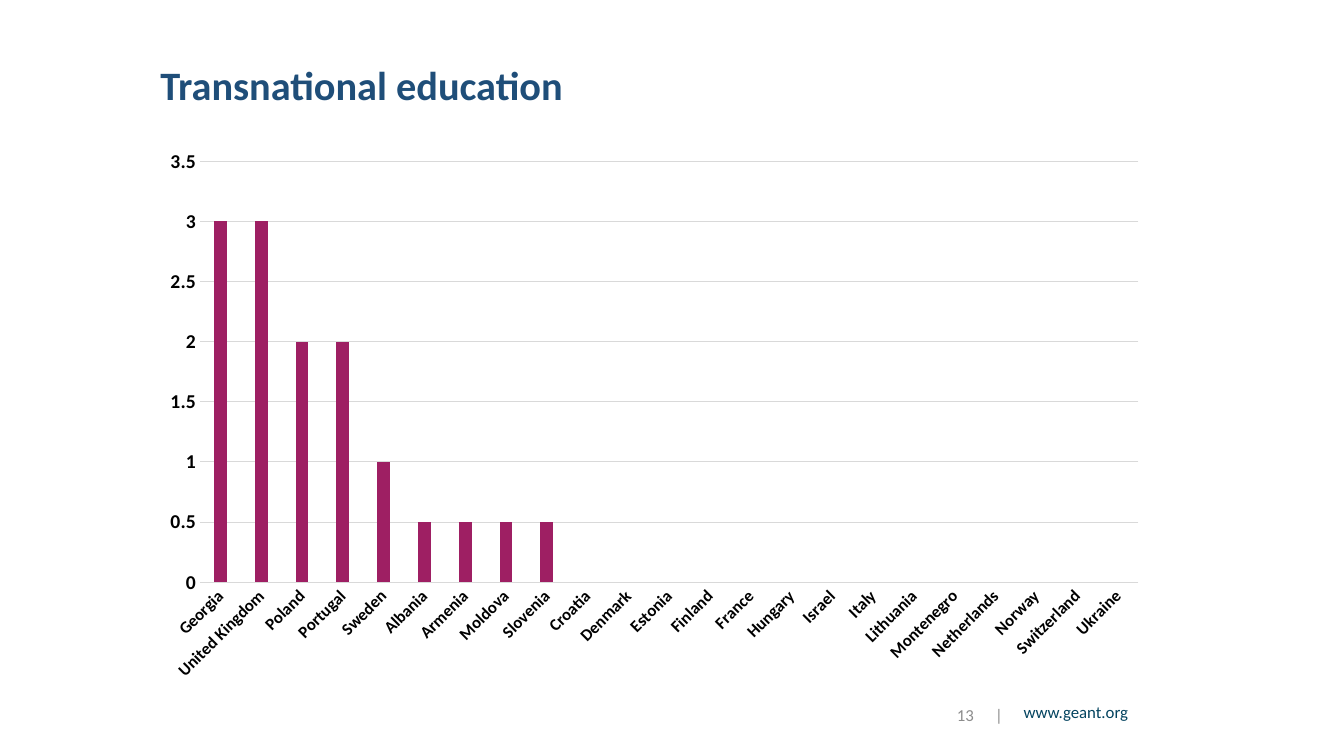
from lxml.etree import SubElement
from pptx import Presentation
from pptx.chart.data import CategoryChartData
from pptx.dml.color import RGBColor
from pptx.enum.chart import XL_CHART_TYPE, XL_TICK_MARK
from pptx.enum.text import MSO_ANCHOR, MSO_AUTO_SIZE, PP_ALIGN
from pptx.oxml.ns import qn
from pptx.util import Inches, Pt

WIDTH, HEIGHT = Inches(13.33), Inches(7.5)
FONT = "Calibri"
COLORS = {
    "title": "1F4E79",
    "link": "03435F",
    "page": "8C8C8C",
    "bar": "9E1F63",
    "grid": "D9D9D9",
    "text": "000000",
}

# Countries by number of points, highest first
SCORES = {
    3: ["Georgia", "United Kingdom"],
    2: ["Poland", "Portugal"],
    1: ["Sweden"],
    0.5: ["Albania", "Armenia", "Moldova", "Slovenia"],
    None: ["Croatia", "Denmark", "Estonia", "Finland", "France", "Hungary",
           "Israel", "Italy", "Lithuania", "Montenegro", "Netherlands",
           "Norway", "Switzerland", "Ukraine"],
}


def area(col, row, cols, rows):
    """Turn cells of a 100 by 100 grid into left, top, width, height."""
    return (int(WIDTH * col / 100), int(HEIGHT * row / 100),
            int(WIDTH * cols / 100), int(HEIGHT * rows / 100))


def color(name):
    return RGBColor.from_string(COLORS[name])


def style(font, size, name, bold=False):
    font.name = FONT
    font.size = Pt(size)
    font.bold = bold
    font.color.rgb = color(name)


def rule(line):
    line.color.rgb = color("grid")
    line.width = Pt(0.75)


def write(frame, text, size, name, bold=False):
    par = frame.paragraphs[0]
    run = par.add_run()
    run.text = text
    style(run.font, size, name, bold)
    return par


def add_title(slide, text, place):
    title = slide.shapes.title
    title.left, title.top, title.width, title.height = place
    frame = title.text_frame
    frame.auto_size = MSO_AUTO_SIZE.NONE
    frame.vertical_anchor = MSO_ANCHOR.MIDDLE
    par = write(frame, text, 28.8, "title", True)
    par.alignment = PP_ALIGN.LEFT
    par.line_spacing = 0.9


def add_note(slide, text, place, name, anchor, align):
    frame = slide.shapes.add_textbox(*place).text_frame
    frame.word_wrap = True
    frame.vertical_anchor = anchor
    par = write(frame, text, 12, name)
    par.alignment = align
    return frame


def add_page(slide, text, place):
    frame = add_note(slide, text, place, "page", MSO_ANCHOR.MIDDLE, PP_ALIGN.LEFT)
    frame.margin_left, frame.margin_right = Inches(0.2), 0
    # The tab stop sets the gap between number and bar
    props = frame.paragraphs[0]._p.get_or_add_pPr()
    tabs = SubElement(props, qn("a:tabLst"))
    SubElement(tabs, qn("a:tab"), pos=str(Inches(0.38)), algn="l")


def add_bars(slide, place):
    data = CategoryChartData()
    pairs = [(land, score) for score, lands in SCORES.items() for land in lands]
    data.categories = [land for land, _ in pairs]
    data.add_series("Series 1", [score for _, score in pairs])
    chart = slide.shapes.add_chart(
        XL_CHART_TYPE.COLUMN_CLUSTERED, *place, data).chart
    chart.has_legend = chart.has_title = False
    style(chart.font, 10, "text")

    # Bars
    plot = chart.plots[0]
    plot.gap_width, plot.overlap = 219, -27
    plot.vary_by_categories = False
    fill = plot.series[0].format.fill
    fill.solid()
    fill.fore_color.rgb = color("bar")

    # Axes
    lands, scale = chart.category_axis, chart.value_axis
    for axis, size in ((lands, 12), (scale, 14)):
        axis.major_tick_mark = axis.minor_tick_mark = XL_TICK_MARK.NONE
        style(axis.tick_labels.font, size, "text", True)
    rule(lands.format.line)
    lands._element.find(qn("c:txPr")).find(qn("a:bodyPr")).set("rot", "-2700000")
    scale.minimum_scale, scale.maximum_scale, scale.major_unit = 0, 3.5, 0.5
    scale.tick_labels.number_format = "General"
    scale.tick_labels.number_format_is_linked = False
    scale.format.line.fill.background()
    scale.has_major_gridlines = True
    rule(scale.major_gridlines.format.line)


def main():
    deck = Presentation()
    deck.slide_width, deck.slide_height = WIDTH, HEIGHT
    slide = deck.slides.add_slide(deck.slide_layouts[5])

    # Heading and chart
    add_title(slide, "Transnational education", area(11.18, 8.4, 81.17, 6.27))
    add_bars(slide, area(11.18, 18.27, 75.02, 73.2))

    # Footer
    add_note(slide, "www.geant.org", area(72.09, 92.13, 12.6, 4.8),
             "link", MSO_ANCHOR.TOP, PP_ALIGN.RIGHT)
    add_page(slide, "13\t|", area(69.69, 92.13, 5.48, 4.8))
    deck.save("out.pptx")


if __name__ == "__main__":
    main()
